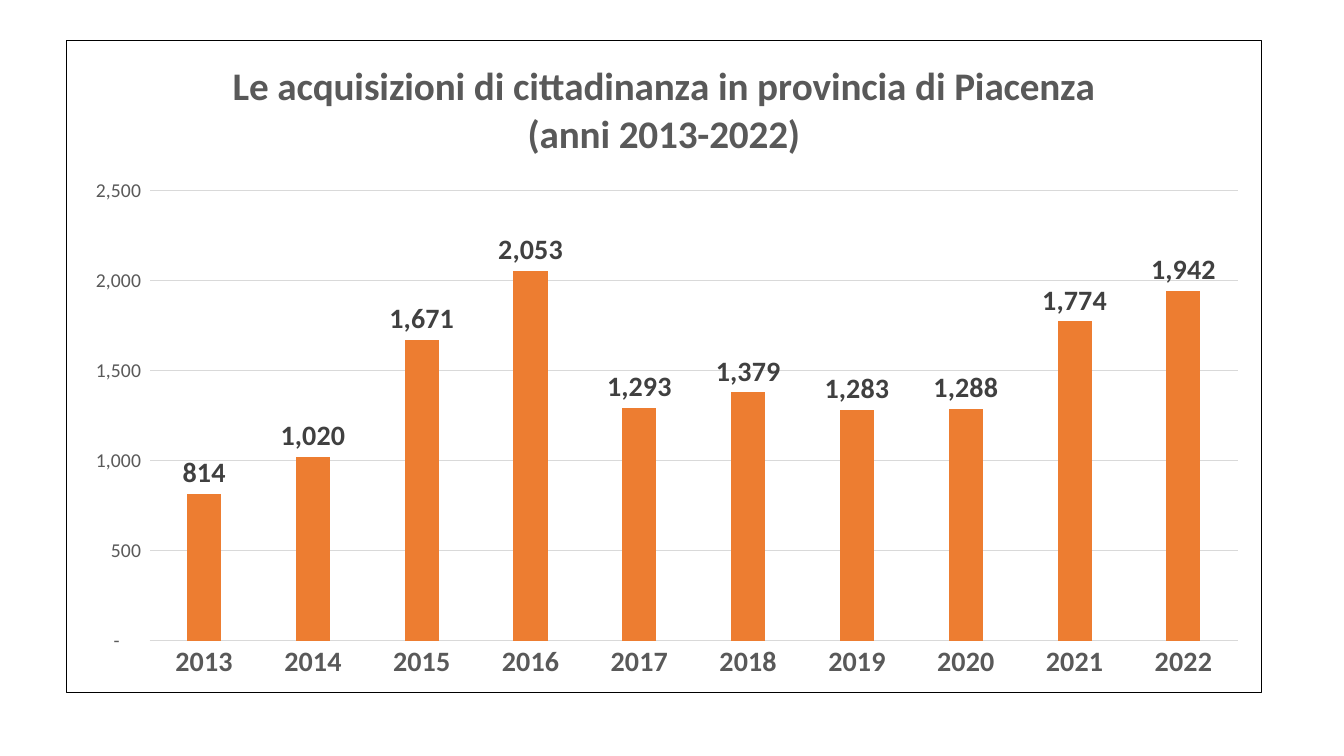
from dataclasses import dataclass

from lxml import etree
from pptx import Presentation
from pptx.chart.data import CategoryChartData
from pptx.dml.color import RGBColor
from pptx.enum.chart import XL_CHART_TYPE, XL_LABEL_POSITION, XL_TICK_MARK
from pptx.enum.text import PP_ALIGN
from pptx.oxml import parse_xml
from pptx.oxml.ns import nsdecls, qn
from pptx.util import Inches, Pt

COLUMNS = XL_CHART_TYPE.COLUMN_CLUSTERED
OUTSIDE_END = XL_LABEL_POSITION.OUTSIDE_END
NO_TICK = XL_TICK_MARK.NONE
CENTER = PP_ALIGN.CENTER

SLIDE_W, SLIDE_H = Inches(13.33), Inches(7.5)

TITLE_LINES = ("Le acquisizioni di cittadinanza in provincia di Piacenza",
               "(anni 2013-2022)")
YEARS = [str(year) for year in range(2013, 2023)]
ACQUISITIONS = (814, 1020, 1671, 2053, 1293, 1379, 1283, 1288, 1774, 1942)
AXIS_FORMAT = '_-* #,##0_-;\\-* #,##0_-;_-* "-"??_-;_-@_'


@dataclass(frozen=True)
class Theme:
    font: str = "Calibri"
    bar: str = "ED7D31"
    text: str = "595959"
    label: str = "404040"
    grid: str = "D9D9D9"
    border: str = "000000"
    background: str = "FFFFFF"
    title_size: int = 28
    label_size: int = 20
    axis_size: int = 14
    base_size: int = 10
    line_width: float = 0.75


THEME = Theme()


def style_font(font, size, color, bold=False):
    font.name = THEME.font
    font.size = Pt(size)
    font.bold = bold
    font.color.rgb = RGBColor.from_string(color)


def style_line(line, color):
    line.color.rgb = RGBColor.from_string(color)
    line.width = Pt(THEME.line_width)


def add_column_chart(s):
    data = CategoryChartData(number_format="#,##0")
    data.categories = YEARS
    data.add_series("Series 1", ACQUISITIONS)
    frame = s.shapes.add_chart(
        COLUMNS, Inches(0.65), Inches(0.4), Inches(11.87), Inches(6.48), data)
    chart = frame.chart
    style_font(chart.font, THEME.base_size, THEME.border)
    chart.has_legend = False
    return chart


def set_title(chart):
    tf = chart.chart_title.text_frame
    tf.text = "\n".join(TITLE_LINES)
    for p in tf.paragraphs:
        p.alignment = CENTER
        for r in p.runs:
            style_font(r.font, THEME.title_size, THEME.text, True)
    chart.chart_title.include_in_layout = False


def style_axes(chart):
    years, values = chart.category_axis, chart.value_axis
    for axis in (years, values):
        axis.major_tick_mark = axis.minor_tick_mark = NO_TICK
    style_font(years.tick_labels.font, THEME.label_size, THEME.text, True)
    style_line(years.format.line, THEME.grid)
    years.has_major_gridlines = False

    style_font(values.tick_labels.font, THEME.axis_size, THEME.text)
    values.tick_labels.number_format = AXIS_FORMAT
    values.tick_labels.number_format_is_linked = False
    values.minimum_scale, values.maximum_scale = 0, 2500
    values.major_unit = 500
    values.format.line.fill.background()
    style_line(values.major_gridlines.format.line, THEME.grid)


def style_columns(chart):
    plot = chart.plots[0]
    plot.gap_width, plot.overlap = 219, -27
    plot.vary_by_categories = False
    series = plot.series[0]
    series.format.fill.solid()
    series.format.fill.fore_color.rgb = RGBColor.from_string(THEME.bar)
    labels = series.data_labels
    labels.show_value = True
    labels.position = OUTSIDE_END
    labels.number_format = "#,##0"
    labels.number_format_is_linked = False
    style_font(labels.font, THEME.label_size, THEME.label, True)


def set_plot_layout(chart, x, y, w, h):
    """Place the inner plot area, in shares of the chart's size."""
    area = chart.plots[0]._element.getparent()
    for old in area.findall(qn("c:layout")):
        area.remove(old)
    layout = parse_xml(f"<c:layout {nsdecls('c')}/>")
    manual = etree.SubElement(layout, qn("c:manualLayout"))
    settings = {"layoutTarget": "inner", "xMode": "edge", "yMode": "edge",
                "x": x, "y": y, "w": w, "h": h}
    for name, value in settings.items():
        etree.SubElement(manual, qn(f"c:{name}")).set("val", str(value))
    area.insert(0, layout)


def set_border(chart):
    chart_space = chart._chartSpace
    chart_space.find(qn("c:chart")).addnext(parse_xml(
        f'<c:spPr {nsdecls("c", "a")}>'
        f'<a:solidFill><a:srgbClr val="{THEME.background}"/></a:solidFill>'
        f'<a:ln w="{Pt(THEME.line_width)}"><a:solidFill>'
        f'<a:srgbClr val="{THEME.border}"/></a:solidFill></a:ln></c:spPr>'))


def main():
    prs = Presentation()
    prs.slide_width, prs.slide_height = SLIDE_W, SLIDE_H
    s = prs.slides.add_slide(prs.slide_layouts[6])
    chart = add_column_chart(s)
    set_title(chart)
    style_axes(chart)
    style_columns(chart)
    set_plot_layout(chart, 0.07, 0.23, 0.91, 0.69)
    set_border(chart)
    prs.save("out.pptx")


if __name__ == "__main__":
    main()
